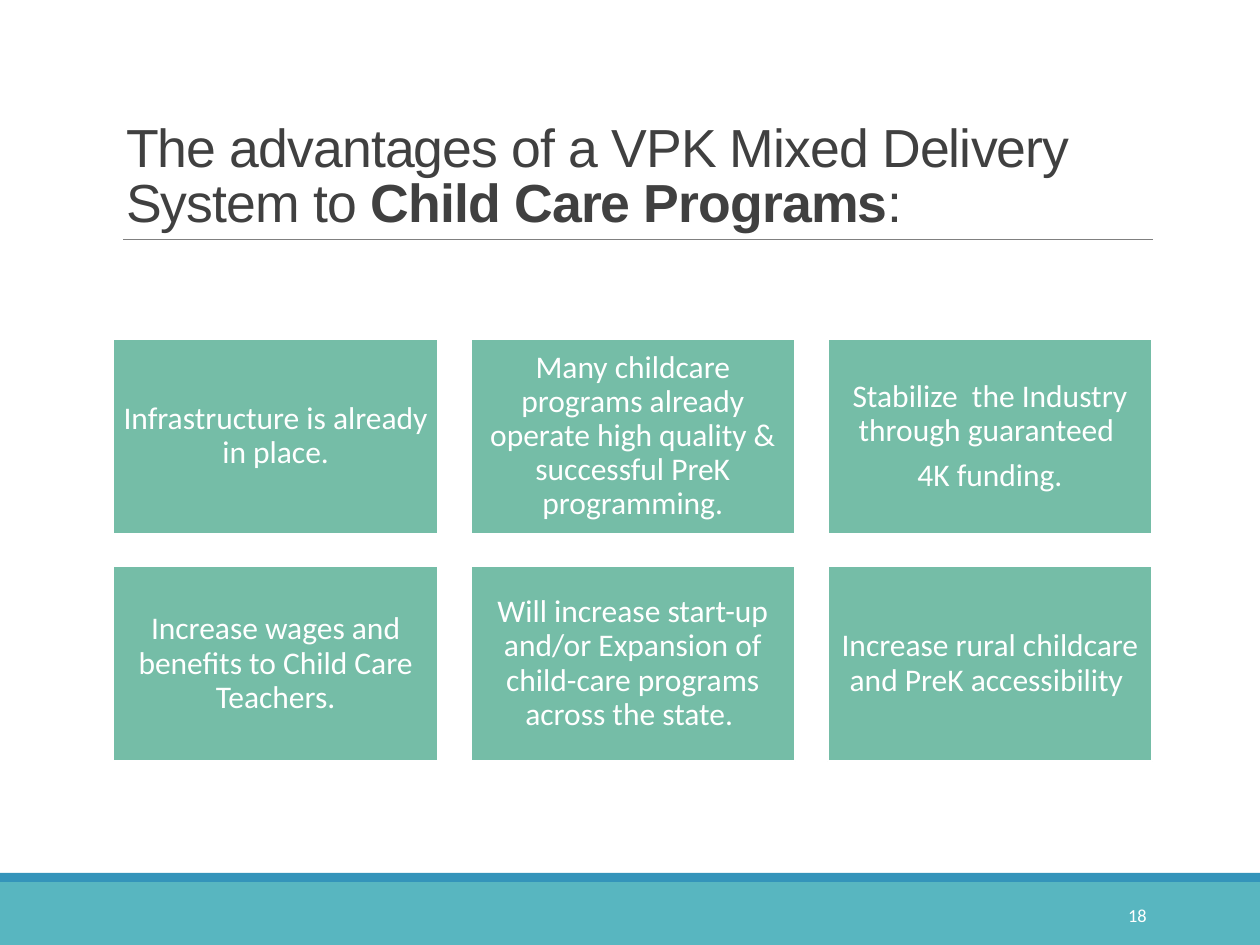
from pptx import Presentation
from pptx.dml.color import RGBColor
from pptx.enum import shapes, text
from pptx.oxml import parse_xml
from pptx.oxml.ns import nsdecls
from pptx.util import Pt

TITLE = [[("The advantages of a VPK Mixed Delivery System to ", False),
          ("Child Care Programs", True), (":", False)]]
CARDS = [
    ["Infrastructure is already in place."],
    ["Many childcare programs already operate high quality & "
     "successful PreK programming."],
    ["Stabilize  the Industry through guaranteed ", "4K funding."],
    ["Increase wages and benefits to Child Care Teachers."],
    ["Will increase start-up and/or Expansion of child-care programs "
     "across the state. "],
    ["Increase rural childcare and PreK accessibility "],
]
PAGE = "18"

THEME = {
    "head": "Arial", "body": "Calibri",
    "ink": "404040", "white": "FFFFFF", "rule": "808080",
    "card": "75BDA7", "band": "58B6C0", "strip": "3494BA",
    "title": 30.6, "text": 18, "page": 10.5,
}
WIDE, HIGH = 720, 540
LEFT, TOP = 64.8, 193.8
CARD_W, CARD_H, GAP, COLS = 185.5, 111.3, 18.6, 3


def color(name):
    return RGBColor.from_string(THEME[name])


def write(frame, paras, font="body", size="text", ink="white", align="CENTER",
          anchor="MIDDLE", inset=None, lead=0.9, before=0, after=6.3, track=0):
    """Fill a frame; each paragraph is a string or a list of (text, bold)."""
    frame.word_wrap = True
    frame.auto_size = text.MSO_AUTO_SIZE.NONE
    frame.vertical_anchor = text.MSO_ANCHOR[anchor]
    if inset is not None:
        frame.margin_left = frame.margin_right = Pt(inset)
        frame.margin_top = frame.margin_bottom = Pt(inset)
    for i, parts in enumerate(paras):
        para = frame.add_paragraph() if i else frame.paragraphs[0]
        para.alignment = text.PP_ALIGN[align]
        para.line_spacing = lead
        para.space_before, para.space_after = Pt(before), Pt(after)
        for words, bold in [(parts, False)] if isinstance(parts, str) else parts:
            run = para.add_run()
            run.text = words
            run.font.name, run.font.size = THEME[font], Pt(THEME[size])
            run.font.bold = bold
            run.font.color.rgb = color(ink)
            if track:
                run._r.get_or_add_rPr().set("spc", str(int(track * 100)))


def add_box(slide, x, y, w, h, fill, line=None):
    box = slide.shapes.add_shape(shapes.MSO_SHAPE.RECTANGLE,
                                 Pt(x), Pt(y), Pt(w), Pt(h))
    box.shadow.inherit = False
    box.fill.solid()
    box.fill.fore_color.rgb = color(fill)
    if line:
        box.line.color.rgb = color(line)
        box.line.width = Pt(1.25)
    else:
        box.line.fill.background()
    return box


def add_rule(slide, x, y, end):
    rule = slide.shapes.add_connector(shapes.MSO_CONNECTOR.STRAIGHT,
                                      Pt(x), Pt(y), Pt(end), Pt(y))
    rule.line.color.rgb = color("rule")
    rule.line.width = Pt(0.5)
    rule._element.spPr.append(parse_xml(f"<a:effectLst {nsdecls('a')}/>"))


def main():
    deck = Presentation()
    deck.slide_width, deck.slide_height = Pt(WIDE), Pt(HIGH)
    slide = deck.slides.add_slide(deck.slide_layouts[5])

    add_box(slide, 0, 504, WIDE, 36, "band")
    add_box(slide, 0, 498.8, WIDE, 5.2, "strip")
    add_rule(slide, 70.4, 136.8, 658.8)

    title = slide.shapes.title
    title.left, title.top = Pt(LEFT), Pt(22.6)
    title.width, title.height = Pt(594), Pt(114.2)
    write(title.text_frame, TITLE, font="head", size="title", ink="ink",
          align="LEFT", anchor="BOTTOM", lead=0.85, before=6, after=6, track=-0.5)

    for i, paras in enumerate(CARDS):
        row, col = divmod(i, COLS)
        card = add_box(slide, LEFT + col * (CARD_W + GAP),
                       TOP + row * (CARD_H + GAP), CARD_W, CARD_H,
                       "card", line="white")
        write(card.text_frame, paras, inset=5.4)

    page = slide.shapes.add_textbox(Pt(584.8), Pt(508.6), Pt(77.6), Pt(28.8))
    write(page.text_frame, [PAGE], size="page", align="RIGHT", lead=1, after=6)

    deck.save("out.pptx")


if __name__ == "__main__":
    main()
